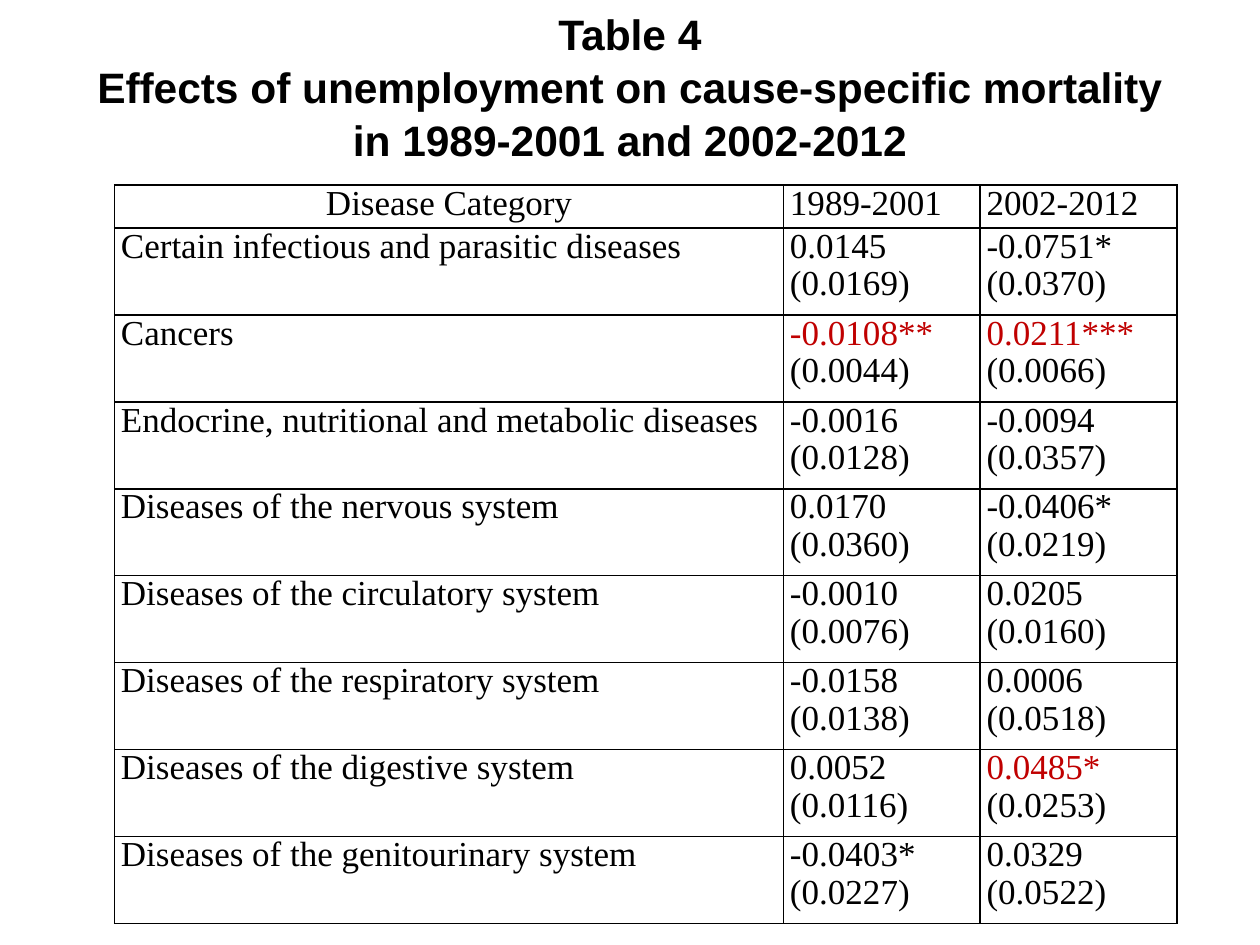
import pptx
import pptx.util
import pptx.dml.color
import pptx.enum.text
import pptx.oxml
import pptx.oxml.ns

Inches = pptx.util.Inches
Pt = pptx.util.Pt
RGB = pptx.dml.color.RGBColor.from_string
ALIGN = pptx.enum.text.PP_ALIGN
ANCHOR = pptx.enum.text.MSO_ANCHOR

TITLE = [
    "Table 4",
    "Effects of unemployment on cause-specific mortality in 1989-2001 and 2002-2012",
]
HEADER = ["Disease Category", "1989-2001", "2002-2012"]
EFFECTS = [
    ("Certain infectious and parasitic diseases", ("0.0145", "(0.0169)"), ("-0.0751*", "(0.0370)")),
    ("Cancers", ("-0.0108**", "(0.0044)"), ("0.0211***", "(0.0066)")),
    ("Endocrine, nutritional and metabolic diseases", ("-0.0016", "(0.0128)"), ("-0.0094", "(0.0357)")),
    ("Diseases of the nervous system", ("0.0170", "(0.0360)"), ("-0.0406*", "(0.0219)")),
    ("Diseases of the circulatory system", ("-0.0010", "(0.0076)"), ("0.0205", "(0.0160)")),
    ("Diseases of the respiratory system", ("-0.0158", "(0.0138)"), ("0.0006", "(0.0518)")),
    ("Diseases of the digestive system", ("0.0052", "(0.0116)"), ("0.0485*", "(0.0253)")),
    ("Diseases of the genitourinary system", ("-0.0403*", "(0.0227)"), ("0.0329", "(0.0522)")),
]
HIGHLIGHTED = {"-0.0108**", "0.0211***", "0.0485*"}

THEME = {
    "ink": "000000",
    "highlight": "C00000",
    "paper": "FFFFFF",
    "title": {"name": "Arial", "size": Pt(24.3), "bold": True},
    "cell": {"name": "Times New Roman", "size": Pt(20), "bold": False},
    "title_spacing": 1.04,
    "cell_spacing": 0.97,
}
TITLE_BOX = {"left": Inches(0.5), "top": Inches(0.21), "width": Inches(9), "height": Inches(0.94)}
COLUMNS = [5.31, 1.56, 1.56]
ROWS = [0.34] + [0.69] * len(EFFECTS)
CELL_FORMAT = {
    "margin_left": Inches(0.05),
    "margin_right": Inches(0.05),
    "margin_top": 0,
    "margin_bottom": 0,
    "vertical_anchor": ANCHOR.TOP,
}


def apply(target, values):
    for name, value in values.items():
        setattr(target, name, value)


def style_font(font, style, color):
    apply(font, THEME[style])
    font.color.rgb = RGB(color)


def add_borders(cell):
    properties = cell._tc.get_or_add_tcPr()
    for position, side in enumerate(("lnL", "lnR", "lnT", "lnB")):
        line = pptx.oxml.parse_xml(
            f'<a:{side} {pptx.oxml.ns.nsdecls("a")} w="12700"><a:solidFill>'
            f'<a:srgbClr val="{THEME["ink"]}"/></a:solidFill></a:{side}>'
        )
        properties.insert(position, line)


def fill_cell(cell, lines, alignment):
    apply(cell, CELL_FORMAT)
    cell.fill.solid()
    cell.fill.fore_color.rgb = RGB(THEME["paper"])
    add_borders(cell)
    cell.text_frame.text = "\n".join(lines)
    for para in cell.text_frame.paragraphs:
        apply(para, {"alignment": alignment, "line_spacing": THEME["cell_spacing"]})
        for span in para.runs:
            color = "highlight" if span.text in HIGHLIGHTED else "ink"
            style_font(span.font, "cell", THEME[color])


def add_title(page):
    box = page.shapes.title
    apply(box, TITLE_BOX)
    frame = box.text_frame
    apply(frame, {"word_wrap": True, "vertical_anchor": ANCHOR.MIDDLE,
                  "auto_size": pptx.enum.text.MSO_AUTO_SIZE.NONE})
    para = frame.paragraphs[0]
    apply(para, {"alignment": ALIGN.CENTER, "line_spacing": THEME["title_spacing"]})
    for index, text in enumerate(TITLE):
        if index:
            para.add_line_break()
        span = para.add_run()
        span.text = text
        style_font(span.font, "title", THEME["ink"])


def add_effects_table(page):
    table = page.shapes.add_table(
        len(ROWS), len(COLUMNS), Inches(0.91), Inches(1.47),
        Inches(sum(COLUMNS)), Inches(sum(ROWS)),
    ).table
    apply(table, {"first_row": False, "horz_banding": False})
    for column, width in zip(table.columns, COLUMNS):
        column.width = Inches(width)
    for row, height in zip(table.rows, ROWS):
        row.height = Inches(height)
    contents = [[(text,) for text in HEADER]]
    contents += [[(disease,), *estimates] for disease, *estimates in EFFECTS]
    for row_index, row in enumerate(contents):
        for column_index, lines in enumerate(row):
            is_corner = row_index == column_index == 0
            alignment = ALIGN.CENTER if is_corner else ALIGN.JUSTIFY
            fill_cell(table.cell(row_index, column_index), lines, alignment)


def main():
    deck = pptx.Presentation()
    apply(deck, {"slide_width": Inches(10), "slide_height": Inches(7.5)})
    page = deck.slides.add_slide(deck.slide_layouts[5])
    add_title(page)
    add_effects_table(page)
    deck.save("out.pptx")


if __name__ == "__main__":
    main()
